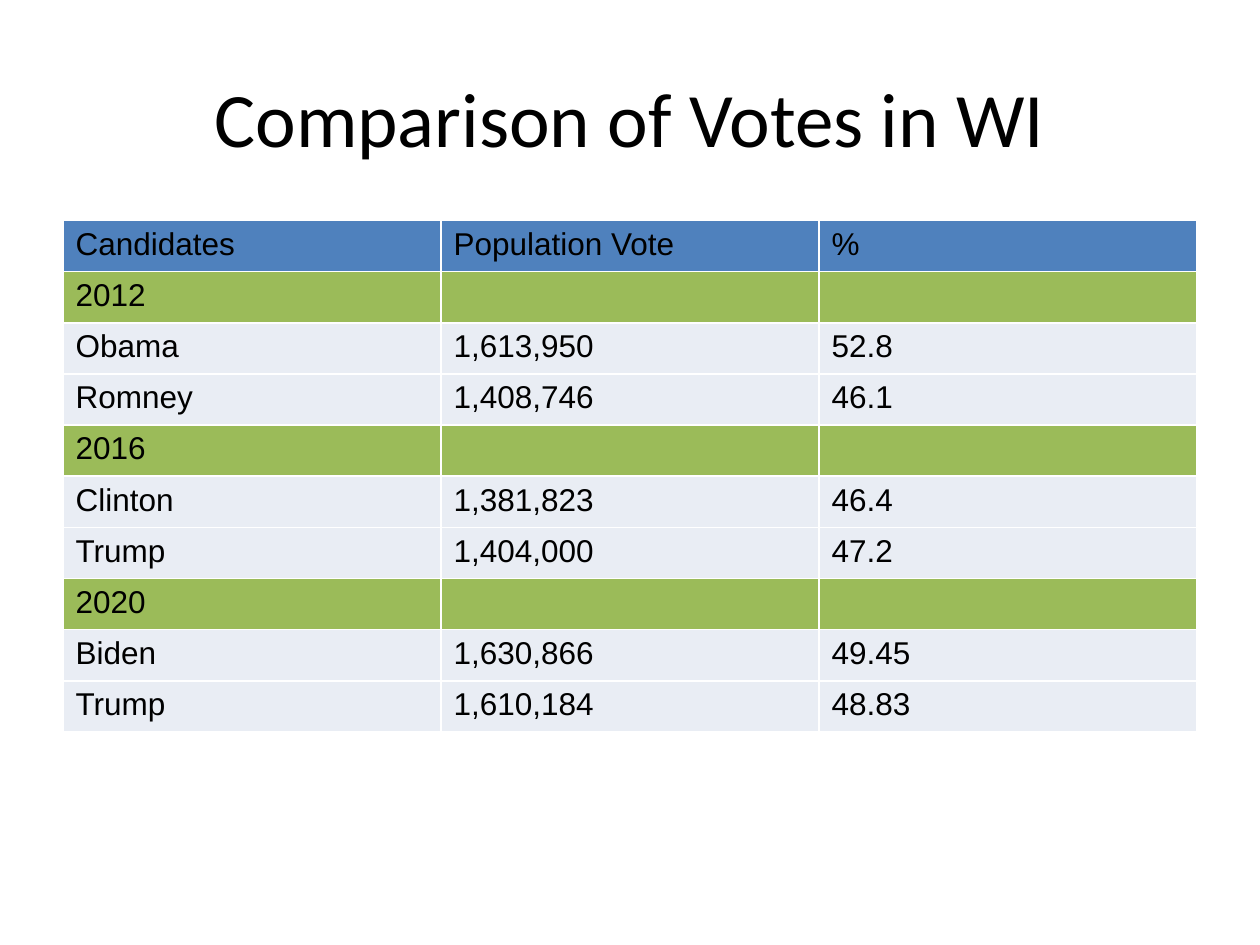
import dataclasses
import pptx
import pptx.dml.color
import pptx.enum.text
import pptx.oxml
import pptx.oxml.ns
import pptx.util

WIDE, HIGH = 10, 7.5
EDGE = 0.05 * WIDE
SPAN = WIDE - 2 * EDGE
ROW = 4.06 / 10
HEAD, YEAR, PLAIN = "4F81BD", "9BBB59", "E9EDF4"
BLACK, WHITE = "000000", "FFFFFF"


@dataclasses.dataclass
class Row:
    texts: tuple[str, ...]
    fill: str = PLAIN


ROWS = [
    Row(("Candidates", "Population Vote", "%"), HEAD),
    Row(("2012", "", ""), YEAR),
    Row(("Obama", "1,613,950", "52.8")),
    Row(("Romney", "1,408,746", "46.1")),
    Row(("2016", "", ""), YEAR),
    Row(("Clinton", "1,381,823", "46.4")),
    Row(("Trump", "1,404,000", "47.2")),
    Row(("2020", "", ""), YEAR),
    Row(("Biden", "1,630,866", "49.45")),
    Row(("Trump", "1,610,184", "48.83")),
]


def tint(code: str) -> pptx.dml.color.RGBColor:
    return pptx.dml.color.RGBColor.from_string(code)


def style(frame, face: str, size: int) -> None:
    for para in frame.paragraphs:
        for run in para.runs:
            run.font.name = face
            run.font.size = pptx.util.Pt(size)
            run.font.bold = False
            run.font.color.rgb = tint(BLACK)


def place(shape, left: float, top: float, width: float, height: float) -> None:
    shape.left, shape.top, shape.width, shape.height = map(
        pptx.util.Inches, (left, top, width, height))


def border(cell, code: str, width: float) -> None:
    props = cell._tc.get_or_add_tcPr()
    for side in ("lnL", "lnR", "lnT", "lnB"):
        props.append(pptx.oxml.parse_xml(
            f'<a:{side} {pptx.oxml.ns.nsdecls("a")} w="{pptx.util.Pt(width)}">'
            f'<a:solidFill><a:srgbClr val="{code}"/></a:solidFill></a:{side}>'))


def draw_title(slide, text: str) -> None:
    title = slide.shapes.title
    place(title, EDGE, 0.04 * HIGH, SPAN, HIGH / 6)
    frame = title.text_frame
    frame.text = text
    frame.vertical_anchor = pptx.enum.text.MSO_ANCHOR.MIDDLE
    frame.paragraphs[0].alignment = pptx.enum.text.PP_ALIGN.CENTER
    style(frame, "Calibri", 44)


def draw_table(slide, rows: list[Row]) -> None:
    box = map(pptx.util.Inches, (EDGE, 1.75, SPAN, ROW * len(rows)))
    table = slide.shapes.add_table(len(rows), len(rows[0].texts), *box).table
    table.horz_banding = False
    for line, row in zip(table.rows, rows):
        line.height = pptx.util.Inches(ROW)
        for cell, text in zip(line.cells, row.texts):
            cell.text_frame.text = text
            style(cell.text_frame, "Arial", 18)
            border(cell, WHITE, 1)
            cell.fill.solid()
            cell.fill.fore_color.rgb = tint(row.fill)


def main() -> None:
    deck = pptx.Presentation()
    deck.slide_width = pptx.util.Inches(WIDE)
    deck.slide_height = pptx.util.Inches(HIGH)
    slide = deck.slides.add_slide(deck.slide_layouts[5])
    draw_title(slide, "Comparison of Votes in WI")
    draw_table(slide, ROWS)
    deck.save("out.pptx")


if __name__ == "__main__":
    main()
